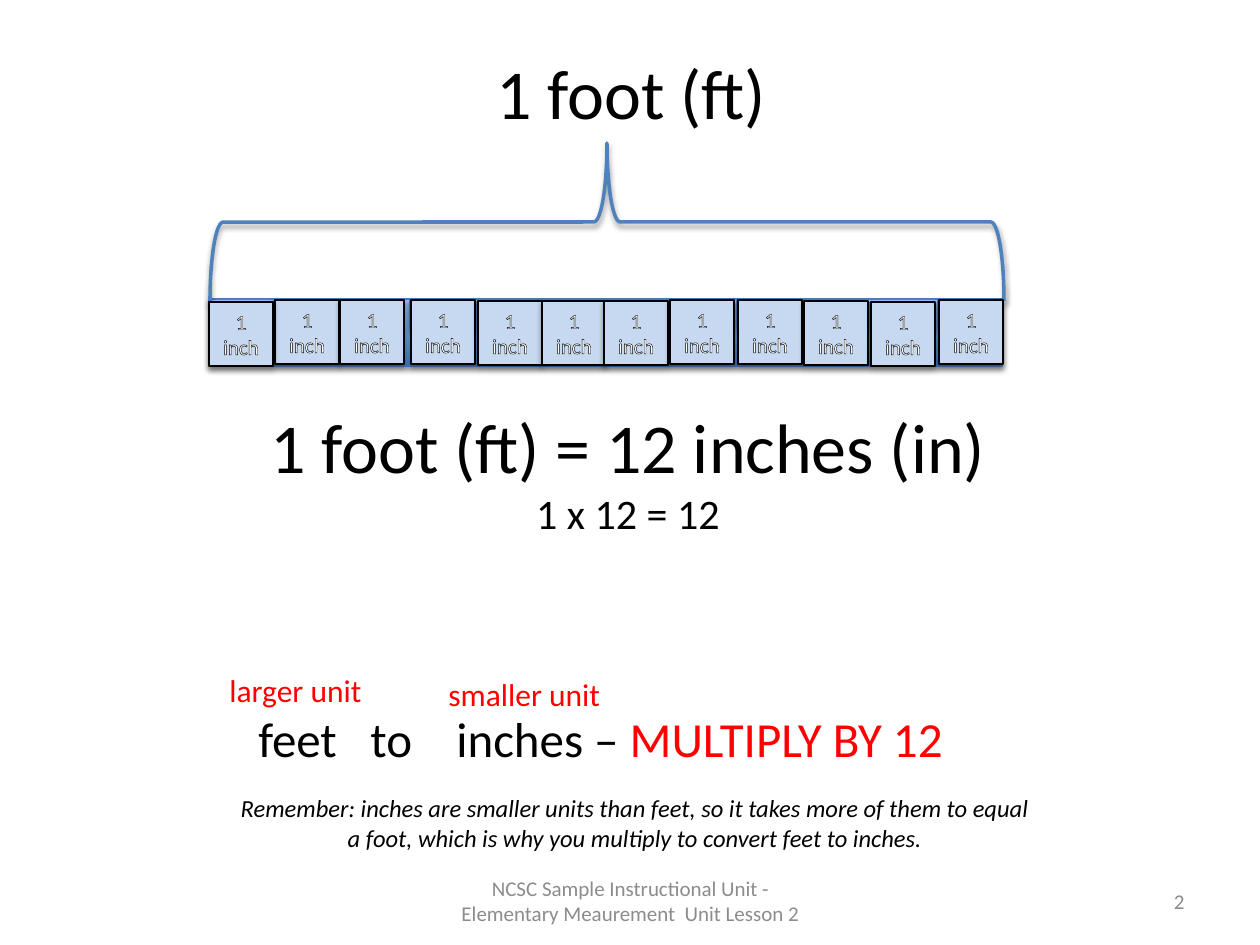
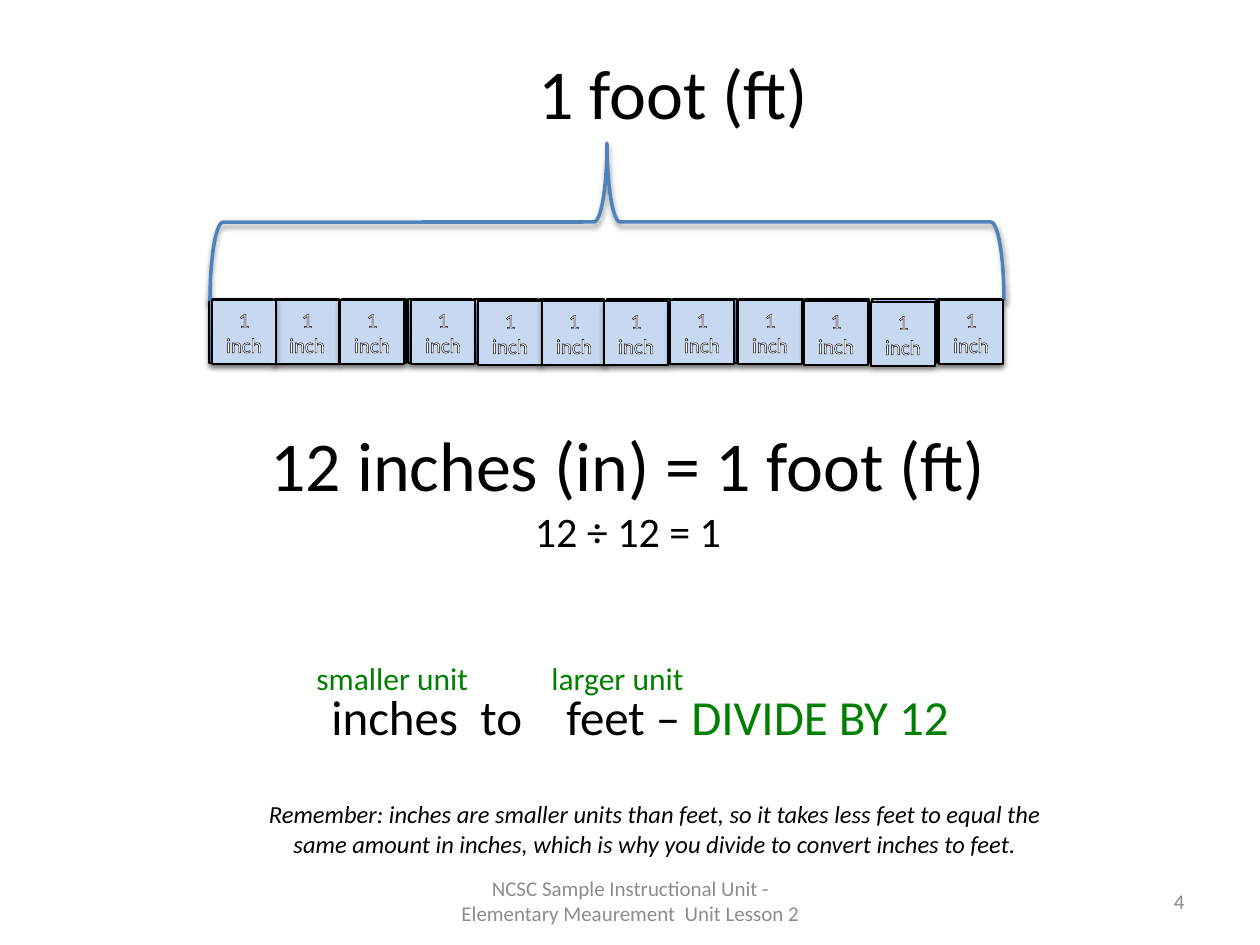
from pptx import Presentation
from pptx import util as u
from pptx.dml.color import RGBColor
from pptx.enum import shapes, text
from pptx.oxml import parse_xml
from pptx.oxml.ns import nsdecls

PX = 914400 / 126  # one px in EMU
FONT = "Calibri"
BLACK, WHITE, GREY = "000000", "FFFFFF", "8C8C8C"
RED, GREEN = "FF0000", "008000"
BLUE, TILE_BLUE, BAR_EDGE = "4F81BD", "C6D9F1", "4B7EBC"
BAR_STOPS = ("3F80CE", "A4C4FF")
FOOTER = "NCSC Sample Instructional Unit - Elementary Meaurement  Unit Lesson 2"

LEFT, CENTER, RIGHT = (text.PP_ALIGN.LEFT, text.PP_ALIGN.CENTER,
                       text.PP_ALIGN.RIGHT)
TOP, MIDDLE = text.MSO_ANCHOR.TOP, text.MSO_ANCHOR.MIDDLE
RECT, BRACE = shapes.MSO_SHAPE.RECTANGLE, shapes.MSO_SHAPE.LEFT_BRACE

# The ruler: (left, top) of the hand-placed inch tiles after the first one
TILE = 64
RULER_LEFT, RULER_TOP, RULER_WIDTH = 209, 299, 793
TILES = [(275, 300), (340, 300), (411, 300), (478, 301), (542, 301),
         (604, 301), (670, 300), (738, 300), (804, 301), (871, 302),
         (939, 300)]


def px(*lengths):
    return [u.Emu(round(n * PX)) for n in lengths]


def color(hex_code):
    return RGBColor.from_string(hex_code)


def add_shadow(sp, alpha, dist):
    """Soft shadow straight below a shape or connector."""
    effects = parse_xml(
        f'<a:effectLst {nsdecls("a")}>'
        f'<a:outerShdw blurRad="40000" dist="{dist}" dir="5400000" rotWithShape="0">'
        f'<a:srgbClr val="{BLACK}"><a:alpha val="{alpha * 1000}"/></a:srgbClr>'
        '</a:outerShdw></a:effectLst>')
    sp._element.spPr.append(effects)


def set_line(sp, hex_code, width):
    sp.line.color.rgb = color(hex_code)
    sp.line.width = u.Pt(width)


def add_run(p, content, size=18, hex_code=BLACK, italic=False, outline=False):
    r = p.add_run()
    r.text = content
    r.font.name, r.font.size = FONT, u.Pt(size)
    r.font.italic = italic or None
    r.font.color.rgb = color(hex_code)
    if outline:
        r._r.get_or_add_rPr().insert(0, parse_xml(
            f'<a:ln {nsdecls("a")} w="9525"><a:solidFill>'
            f'<a:srgbClr val="{BLACK}"/></a:solidFill></a:ln>'))
    return r


def add_text(slide, box, content, align=LEFT, anchor=TOP, **fmt):
    """Text box with one formatted paragraph; returns its text frame."""
    tf = slide.shapes.add_textbox(*px(*box)).text_frame
    tf.word_wrap = True
    tf.vertical_anchor = anchor
    p = tf.paragraphs[0]
    p.alignment = align
    add_run(p, content, **fmt)
    return tf


def add_bar(slide, box, edge):
    """Rectangle with the blue vertical gradient."""
    sp = slide.shapes.add_shape(RECT, *px(*box))
    sp.fill.gradient()
    sp.fill.gradient_angle = 90
    for stop, hex_code, position in zip(sp.fill.gradient_stops, BAR_STOPS, (0, 1)):
        stop.color.rgb = color(hex_code)
        stop.position = position
    set_line(sp, edge, 0.75)
    add_shadow(sp, 35, 23000)


def add_tile(slide, left, top):
    sp = slide.shapes.add_shape(RECT, *px(left, top, TILE, TILE))
    sp.fill.solid()
    sp.fill.fore_color.rgb = color(TILE_BLUE)
    set_line(sp, BLACK, 0.75)
    add_shadow(sp, 35, 23000)
    tf = sp.text_frame
    tf.word_wrap = True
    tf.vertical_anchor = MIDDLE
    p = tf.paragraphs[0]
    p.alignment = CENTER
    add_run(p, "1 inch", size=12, hex_code=WHITE, outline=True)


def add_tick(slide, x, top):
    x1, y1, y2 = px(x, top, top + 29)
    line = slide.shapes.add_connector(shapes.MSO_CONNECTOR.STRAIGHT, x1, y1, x1, y2)
    set_line(line, BLUE, 2)
    add_shadow(line, 38, 20000)


def add_brace(slide):
    sp = slide.shapes.add_shape(BRACE, *px(528, -175, 158, 794))
    sp.rotation = 90
    sp.fill.background()
    set_line(sp, BLUE, 2)
    add_shadow(sp, 38, 20000)


def add_ruled_bar(slide):
    add_bar(slide, (RULER_LEFT, RULER_TOP, RULER_WIDTH, 67), BAR_EDGE)
    for left, top in TILES:
        add_tick(slide, left, top)


def add_split_bar(slide):
    for i in range(12):
        left = RULER_LEFT + round(i * (RULER_WIDTH - TILE) / 11)
        add_bar(slide, (left, RULER_TOP, TILE, TILE), BLACK)


def add_equation(slide, top, equation, working):
    tf = add_text(slide, (253, top, 750, 149), equation, align=CENTER, size=40)
    p = tf.add_paragraph()
    p.alignment = CENTER
    add_run(p, working, size=24)


def add_rule(slide, box, units, tabs, action, hex_code):
    """Conversion line, its words spaced by tab stops."""
    p = add_text(slide, box, units, size=28).paragraphs[0]
    add_run(p, action, size=28, hex_code=hex_code)
    stops = "".join(f'<a:tab pos="{n}" algn="l"/>' for n in px(*tabs))
    p._p.get_or_add_pPr().append(
        parse_xml(f'<a:tabLst {nsdecls("a")}>{stops}</a:tabLst>'))


def add_footer(slide, number):
    fmt = dict(anchor=MIDDLE, size=12, hex_code=GREY)
    add_text(slide, (431, 876, 399, 50), FOOTER, align=CENTER, **fmt)
    add_text(slide, (903, 876, 294, 50), number, align=RIGHT, **fmt)


def add_lesson(prs, ruler, first_tile, title_left, equation, rule, labels,
               reminder, accent, number):
    slide = prs.slides.add_slide(prs.slide_layouts[6])
    # Ruler, brace and title
    ruler(slide)
    add_brace(slide)
    add_text(slide, (title_left, 43, 300, 97), "1 foot (ft)", size=40)
    for left, top in TILES + [first_tile]:
        add_tile(slide, left, top)
    # Equation and conversion rule
    add_equation(slide, *equation)
    add_rule(slide, *rule, accent)
    for left, top, label in labels:
        add_text(slide, (left, top, 184, 50), label, hex_code=accent)
    # Reminder and footer
    left, top, sentence = reminder
    add_text(slide, (left, top, 820, 72), sentence, align=CENTER, size=14, italic=True)
    add_footer(slide, number)


def main():
    prs = Presentation()
    prs.slide_width, prs.slide_height = px(1260, 945)

    # Feet to inches
    add_lesson(
        prs, add_ruled_bar, first_tile=(209, 302), title_left=484,
        equation=(397, "1 foot (ft) = 12 inches (in)", "1 x 12 = 12"),
        rule=((246, 702, 736, 72), "feet\tto\tinches – ", (112, 198),
              "MULTIPLY BY 12"),
        labels=[(217, 665, "larger unit"), (436, 669, "smaller unit")],
        reminder=(225, 787, "Remember: inches are smaller units than feet, so it "
                  "takes more of them to equal a foot, which is why you multiply "
                  "to convert feet to inches."),
        accent=RED, number="2")

    # Inches to feet
    add_lesson(
        prs, add_split_bar, first_tile=(212, 300), title_left=526,
        equation=(415, "12 inches (in) = 1 foot (ft)", "12 ÷ 12 = 1"),
        rule=((319, 680, 654, 72), "inches\tto\tfeet – ", (149, 235),
              "DIVIDE BY 12"),
        labels=[(539, 653, "larger unit"), (304, 653, "smaller unit")],
        reminder=(245, 793, "Remember: inches are smaller units than feet, so it "
                  "takes less feet to equal the same amount in inches, which is "
                  "why you divide to convert inches to feet."),
        accent=GREEN, number="4")

    prs.save("out.pptx")


if __name__ == "__main__":
    main()
